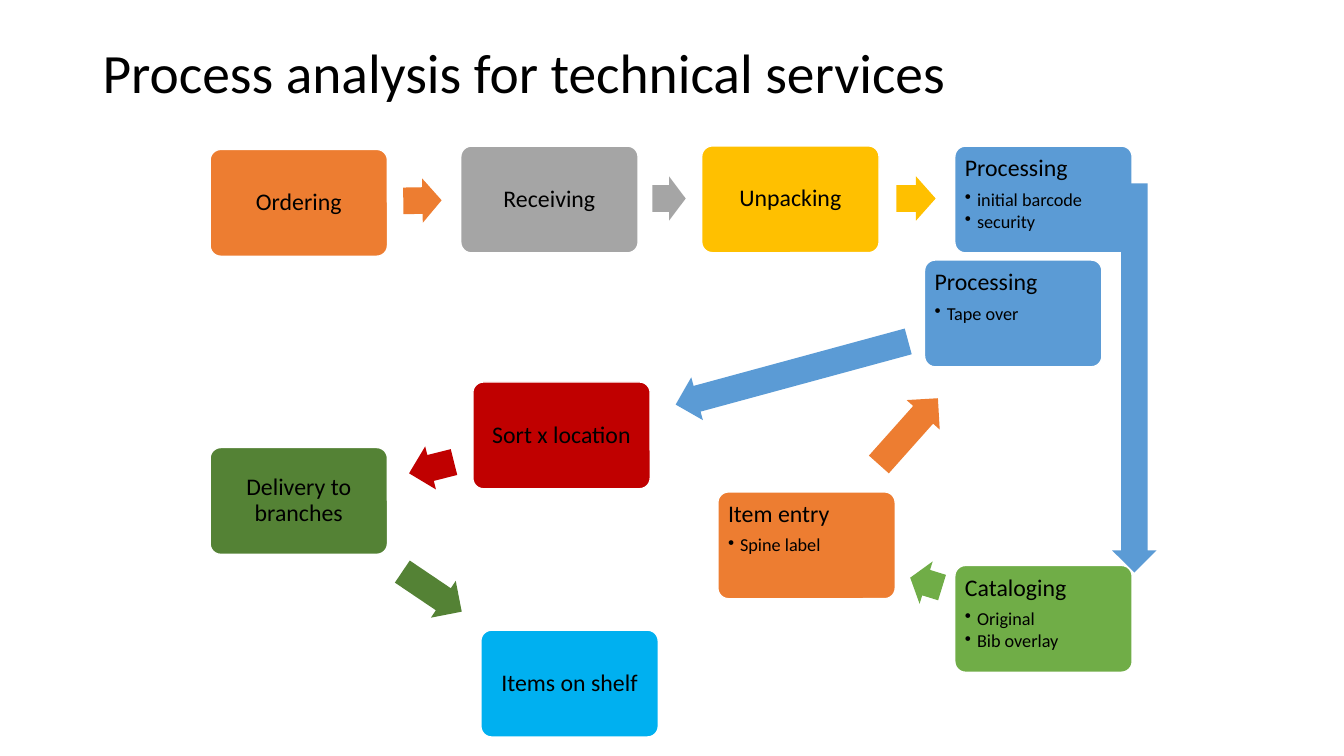
import pptx
import pptx.dml.color
import pptx.enum.shapes
import pptx.enum.text
import pptx.oxml.ns
import pptx.util
import lxml.etree

RGBColor = pptx.dml.color.RGBColor
SHAPE = pptx.enum.shapes.MSO_SHAPE
ALIGN = pptx.enum.text.PP_ALIGN
ANCHOR = pptx.enum.text.MSO_ANCHOR
Pt = pptx.util.Pt
Inches = pptx.util.Inches

BLACK = RGBColor(0, 0, 0)
WHITE = RGBColor(255, 255, 255)
ORANGE = RGBColor(0xED, 0x7D, 0x31)
GRAY = RGBColor(0xA5, 0xA5, 0xA5)
GOLD = RGBColor(0xFF, 0xC0, 0x00)
BLUE = RGBColor(0x5B, 0x9B, 0xD5)
GREEN = RGBColor(0x70, 0xAD, 0x47)
RED = RGBColor(0xC0, 0x00, 0x00)
FOREST = RGBColor(0x54, 0x82, 0x35)
CYAN = RGBColor(0x00, 0xB0, 0xF0)

WIDTH = Inches(13.33)
HEIGHT = Inches(7.5)
BOX = (13.2, 14.13)
THICK = 5.87

STEPS = [
    ("Ordering", [], ORANGE, (15.63, 19.77), (30.01, 23.6, 2.85, 359.1)),
    ("Receiving", [], GRAY, (34.28, 19.33), (48.54, 23.33, 2.48, 0)),
    ("Unpacking", [], GOLD, (52.21, 19.3), (66.69, 23.33, 2.93, 0)),
    ("Processing", ["initial barcode", "security"], BLUE,
     (71.04, 19.33), (69.92, 47.07, 28.96, 90)),
    ("Cataloging", ["Original", "Bib overlay"], GREEN,
     (71.04, 74.8), (67.67, 74.13, 2.48, 197.2)),
    ("Item entry", ["Spine label"], ORANGE,
     (53.41, 65.07), (64.29, 54.13, 6.6, 311.7)),
    ("Processing", ["Tape over"], BLUE,
     (68.79, 34.4), (49.96, 46.4, 17.93, 164.8)),
    ("Sort x location", [], RED, (35.18, 50.53), (30.38, 58.93, 3.45, 165.9)),
    ("Delivery to branches", [], FOREST,
     (15.63, 59.2), (29.48, 75.33, 5.33, 34)),
    ("Items on shelf", [], CYAN, (35.78, 83.36), None),
]


def place(left, top, wide, high):
    return [int(share * size / 100) for share, size in
            zip((left, top, wide, high), (WIDTH, HEIGHT, WIDTH, HEIGHT))]


def style(para, size, after=0):
    para.line_spacing = 0.9
    para.space_after = Pt(after)
    para.font.size = Pt(size)
    para.font.name = "Calibri"
    para.font.color.rgb = BLACK


def bullet(para):
    props = para._p.get_or_add_pPr()
    props.set("marL", str(Inches(0.12)))
    props.set("indent", str(-Inches(0.12)))
    mark = lxml.etree.SubElement(props, pptx.oxml.ns.qn("a:buChar"))
    mark.set("char", "•")


def add_form(slide, kind, area, color):
    form = slide.shapes.add_shape(kind, *place(*area))
    form.shadow.inherit = False
    form.fill.solid()
    form.fill.fore_color.rgb = color
    return form


def add_box(slide, head, items, color, spot):
    box = add_form(slide, SHAPE.ROUNDED_RECTANGLE, spot + BOX, color)
    box.adjustments[0] = 0.1
    box.line.color.rgb = WHITE
    box.line.width = Pt(1)
    frame = box.text_frame
    frame.word_wrap = True
    frame.margin_left = frame.margin_right = Inches(0.07)
    frame.margin_top = frame.margin_bottom = Inches(0.07)
    frame.vertical_anchor = ANCHOR.TOP if items else ANCHOR.MIDDLE
    frame.text = head
    first = frame.paragraphs[0]
    first.alignment = ALIGN.LEFT if items else ALIGN.CENTER
    style(first, 17, 6 if items else 0)
    for item in items:
        para = frame.add_paragraph()
        para.text = item
        para.level = 1
        para.alignment = ALIGN.LEFT
        bullet(para)
        style(para, 13, 2)


def add_arrow(slide, color, left, top, length, turn):
    arrow = add_form(slide, SHAPE.RIGHT_ARROW,
                     (left, top, length, THICK), color)
    arrow.adjustments[0] = 0.6
    arrow.adjustments[1] = 0.5
    arrow.line.fill.background()
    arrow.rotation = turn


def add_title(slide, text):
    title = slide.shapes.add_textbox(*place(6.9, 5.33, 85.67, 9.33))
    frame = title.text_frame
    frame.word_wrap = True
    frame.vertical_anchor = ANCHOR.MIDDLE
    frame.text = text
    style(frame.paragraphs[0], 39.6)


def main():
    deck = pptx.Presentation()
    deck.slide_width = WIDTH
    deck.slide_height = HEIGHT
    slide = deck.slides.add_slide(deck.slide_layouts[6])
    for head, items, color, spot, arrow in STEPS:
        add_box(slide, head, items, color, spot)
        if arrow:
            add_arrow(slide, color, *arrow)
    add_title(slide, "Process analysis for technical services")
    deck.save("out.pptx")


if __name__ == "__main__":
    main()
